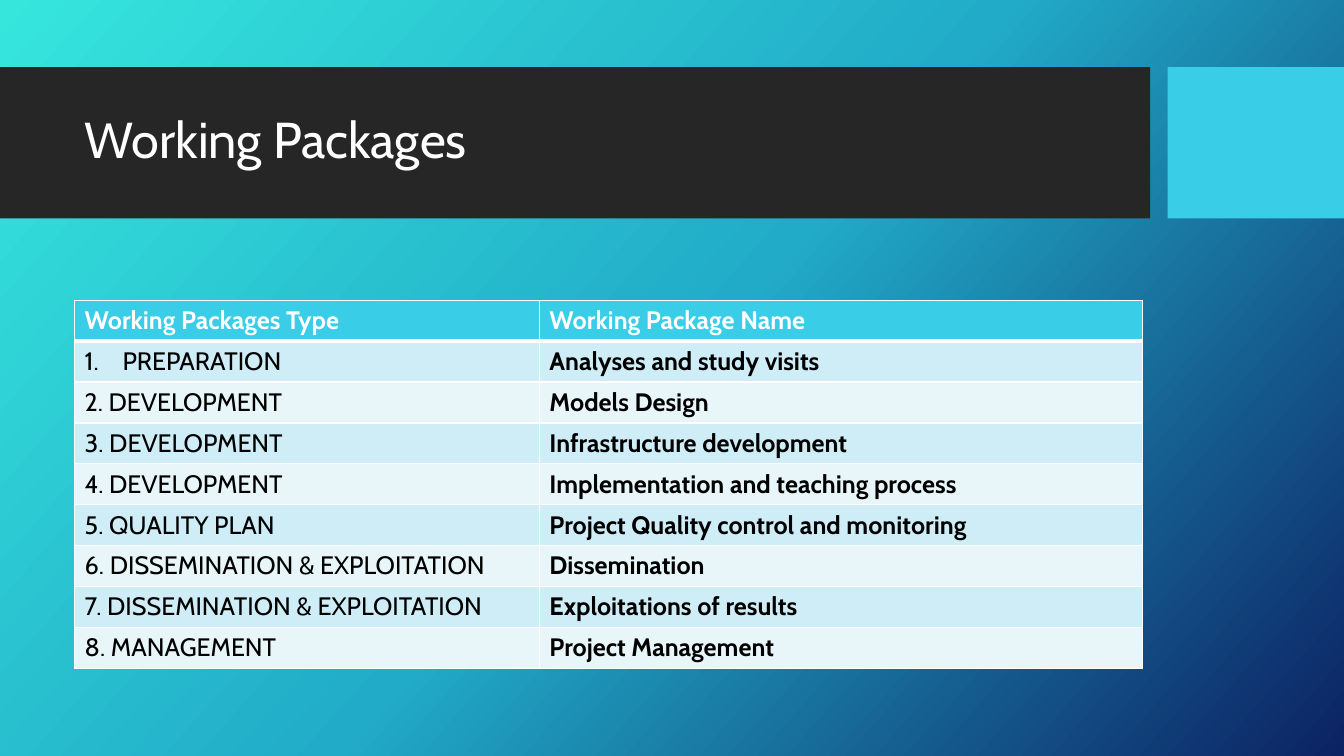
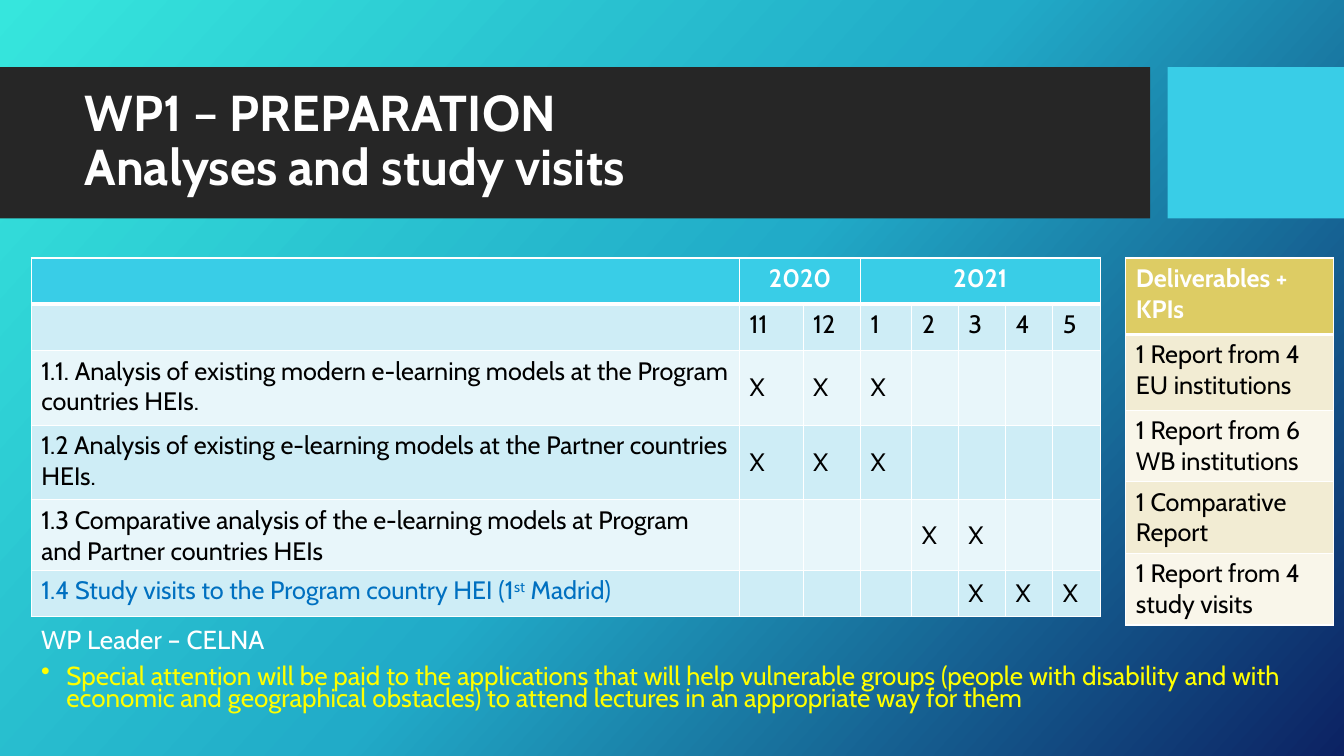
from dataclasses import dataclass, field
from typing import Optional

from lxml import etree
from pptx import Presentation
from pptx.dml.color import RGBColor
from pptx.enum.shapes import MSO_SHAPE
from pptx.enum.text import MSO_ANCHOR, MSO_AUTO_SIZE, PP_ALIGN
from pptx.oxml.ns import qn
from pptx.util import Pt

RECTANGLE = MSO_SHAPE.RECTANGLE
MIDDLE = MSO_ANCHOR.MIDDLE
NO_AUTOFIT = MSO_AUTO_SIZE.NONE
LEFT, CENTER = PP_ALIGN.LEFT, PP_ALIGN.CENTER

FONT = "Cabin"
COLORS = {
    "white": "FFFFFF", "black": "000000", "yellow": "FFFF00", "blue": "0070C0",
    "band": "262626", "accent": "39CDE7", "aqua": "CEEDF6", "pale aqua": "E8F6FA",
    "gold": "DDCC64", "sand": "F2ECD3", "pale sand": "F9F6EA",
    "sky": "36E6DD", "sea": "21ABC8", "navy": "0C2263",
}
BACKGROUND_STOPS = [(0, "sky"), (50, "sea"), (100, "navy")]
BACKGROUND_ANGLE = 42
TITLE_LEFT = 53.3
TABLE_TOP = 184.3


@dataclass(frozen=True)
class Run:
    text: str
    bold: Optional[bool] = None
    raised: bool = False


@dataclass(frozen=True)
class Line:
    """One paragraph; marker is a bullet character or "auto" for numbering."""
    text: str | list[Run]
    color: str = "black"
    bold: bool = False
    size: float = 18
    align: PP_ALIGN = LEFT
    spacing: float = 1
    before: float = 0
    marker: str = ""
    indent: float = 0


@dataclass(frozen=True)
class Palette:
    header: str
    odd: str
    even: str


@dataclass(frozen=True)
class Grid:
    left: float
    top: float
    widths: list[float]
    heights: list[float]
    palette: Palette
    rows: list[list[Line]]
    header_spans: dict[int, int] = field(default_factory=dict)


AQUA = Palette("accent", "aqua", "pale aqua")
GOLD = Palette("gold", "sand", "pale sand")

PACKAGES = [
    ("PREPARATION", "Analyses and study visits"),
    ("DEVELOPMENT", "Models Design"),
    ("DEVELOPMENT", "Infrastructure development"),
    ("DEVELOPMENT", "Implementation and teaching process"),
    ("QUALITY PLAN", "Project Quality control and monitoring"),
    ("DISSEMINATION & EXPLOITATION", "Dissemination"),
    ("DISSEMINATION & EXPLOITATION", "Exploitations of results"),
    ("MANAGEMENT", "Project Management"),
]
MONTHS = [11, 12, 1, 2, 3, 4, 5]
ACTIVITIES = [
    (Line("1.1. Analysis of existing modern e-learning models at the Program countries HEIs."),
     {11, 12, 1}),
    (Line("1.2 Analysis of existing e-learning models at the Partner countries HEIs."),
     {11, 12, 1}),
    (Line("1.3 Comparative analysis of the e-learning models at Program and Partner countries HEIs"),
     {2, 3}),
    (Line([Run("1.4 Study visits to the Program country HEI (1"), Run("st", raised=True),
           Run(" Madrid)")], color="blue"),
     {3, 4, 5}),
]
DELIVERABLES = [
    "1 Report from 4 EU institutions",
    "1 Report from 6 WB institutions",
    "1 Comparative Report",
    "1 Report from 4 study visits",
]
REMARKS = [
    Line("WP Leader – CELNA", "white", size=18.6, spacing=0.7),
    Line("Special attention will be paid to the applications that will help vulnerable groups "
         "(people with disability and with economic and geographical obstacles) to attend "
         "lectures in an appropriate way for them",
         "yellow", size=18.6, spacing=0.7, before=10, marker="•", indent=18),
]


def rgb(name: str) -> RGBColor:
    return RGBColor.from_string(COLORS[name])


def add_marker(paragraph, marker: str, indent: float) -> None:
    properties = paragraph._p.get_or_add_pPr()
    properties.set("marL", str(Pt(indent)))
    properties.set("indent", str(-Pt(indent)))
    if marker == "auto":
        etree.SubElement(properties, qn("a:buAutoNum"), type="arabicPeriod")
    else:
        etree.SubElement(properties, qn("a:buChar"), char=marker)


def write_line(paragraph, line: Line) -> None:
    paragraph.alignment = line.align
    paragraph.line_spacing = line.spacing
    paragraph.space_before = Pt(line.before)
    if line.marker:
        add_marker(paragraph, line.marker, line.indent)
    font = paragraph.font
    font.name, font.size, font.bold = FONT, Pt(line.size), line.bold
    font.color.rgb = rgb(line.color)
    runs = [Run(line.text)] if isinstance(line.text, str) else line.text
    for part in runs:
        if part.text == "\n":
            paragraph.add_line_break()
            continue
        run = paragraph.add_run()
        run.text = part.text
        if part.bold is not None:
            run.font.bold = part.bold
        if part.raised:
            run._r.get_or_add_rPr().set("baseline", "30000")


def add_color_stop(parent, position: int, color: str) -> None:
    stop = etree.SubElement(parent, qn("a:gs"), pos=str(position * 1000))
    etree.SubElement(stop, qn("a:srgbClr"), val=COLORS[color])


def style_layout(layout, slide) -> None:
    """Give the layout its gradient and bands; shapes are made on a slide, then moved."""
    fill = layout.background.fill
    fill.gradient()
    fill.gradient_angle = 360 - BACKGROUND_ANGLE
    stops = next(layout.element.iter(qn("a:gsLst")))
    stops.clear()
    for position, color in BACKGROUND_STOPS:
        add_color_stop(stops, position, color)
    for left, width, color in [(0, 821.5, "band"), (834, 126, "accent")]:
        band = slide.shapes.add_shape(RECTANGLE, Pt(left), Pt(48), Pt(width), Pt(108))
        band.shadow.inherit = False
        band.fill.solid()
        band.fill.fore_color.rgb = rgb(color)
        band.line.fill.background()
        layout.shapes.element.insert(2, band.element)


def write_title(slide, runs: list[Run]) -> None:
    title = slide.shapes.title
    title.left, title.top = Pt(TITLE_LEFT), Pt(59)
    title.width, title.height = Pt(756.7), Pt(85)
    frame = title.text_frame
    frame.word_wrap = True
    frame.auto_size = NO_AUTOFIT
    frame.vertical_anchor = MIDDLE
    write_line(frame.paragraphs[0], Line(runs, "white", size=36, spacing=0.9))


def set_borders(cell, top: float, bottom: float) -> None:
    properties = cell._tc.get_or_add_tcPr()
    for side, width in [("L", 1), ("R", 1), ("T", top), ("B", bottom)]:
        border = etree.SubElement(properties, qn(f"a:ln{side}"), w=str(Pt(width)))
        solid = etree.SubElement(border, qn("a:solidFill"))
        etree.SubElement(solid, qn("a:srgbClr"), val=COLORS["white"])


def draw_table(slide, grid: Grid) -> None:
    table = slide.shapes.add_table(
        len(grid.heights), len(grid.widths), Pt(grid.left), Pt(grid.top),
        Pt(sum(grid.widths)), Pt(sum(grid.heights))).table
    for column, width in zip(table.columns, grid.widths):
        column.width = Pt(width)
    for row, height in zip(table.rows, grid.heights):
        row.height = Pt(height)
    for start, count in grid.header_spans.items():
        table.cell(0, start).merge(table.cell(0, start + count - 1))
    palette = grid.palette
    for r, lines in enumerate(grid.rows):
        color = palette.header if r == 0 else palette.odd if r % 2 else palette.even
        for c, line in enumerate(lines):
            cell = table.cell(r, c)
            set_borders(cell, top=3 if r == 1 else 1, bottom=3 if r == 0 else 1)
            cell.fill.solid()
            cell.fill.fore_color.rgb = rgb(color)
            if line.text:
                write_line(cell.text_frame.paragraphs[0], line)
            if line.text == "X":
                cell.vertical_anchor = MIDDLE


def header(text: str, align: PP_ALIGN = LEFT) -> Line:
    return Line(text, "white", bold=True, align=align)


def package_rows() -> list[list[Line]]:
    rows = [[header("Working Packages Type"), header("Working Package Name")]]
    for number, (kind, name) in enumerate(PACKAGES, 1):
        if number == 1:
            kind_line = Line(kind, marker="auto", indent=27)
        else:
            kind_line = Line(f"{number}. {kind}")
        rows.append([kind_line, Line(name, bold=True)])
    return rows


def schedule_rows() -> list[list[Line]]:
    years = {0: "2020", 2: "2021"}
    rows = [
        [Line("")] + [header(years.get(i, ""), CENTER) for i in range(len(MONTHS))],
        [Line("")] + [Line(str(month)) for month in MONTHS],
    ]
    for activity, active in ACTIVITIES:
        rows.append([activity] + [Line("X" if month in active else "") for month in MONTHS])
    return rows


def draw_remarks(slide) -> None:
    frame = slide.shapes.add_textbox(Pt(22.3), Pt(448), Pt(930), Pt(81)).text_frame
    frame.word_wrap = True
    for i, line in enumerate(REMARKS):
        write_line(frame.add_paragraph() if i else frame.paragraphs[0], line)


def build_packages(slide) -> None:
    write_title(slide, [Run("Working Packages")])
    draw_table(slide, Grid(TITLE_LEFT, 214.5, [332, 431], [29.2] * 9, AQUA, package_rows()))


def build_preparation(slide) -> None:
    write_title(slide, [Run("WP1", bold=True), Run(" – "), Run("PREPARATION", bold=True),
                        Run("\n"), Run("Analyses and study visits", bold=True)])
    deliverables = [header("Deliverables + KPIs")] + [Line(text) for text in DELIVERABLES]
    draw_table(slide, Grid(804.2, TABLE_TOP, [148.3], [54.7, 54, 49, 49.7, 49], GOLD,
                           [[line] for line in deliverables]))
    draw_remarks(slide)
    draw_table(slide, Grid(22.3, TABLE_TOP, [506, 45.4, 41, 36.7, 33.1] + [33.8] * 3,
                           [33.1, 33.1, 53.3, 53.3, 43.9, 33.1], AQUA,
                           schedule_rows(), {1: 2, 3: 5}))


def main() -> None:
    presentation = Presentation()
    presentation.slide_width, presentation.slide_height = Pt(960), Pt(540)
    layout = presentation.slide_layouts.get_by_name("Title Only")
    packages, preparation = (presentation.slides.add_slide(layout) for _ in range(2))
    style_layout(layout, packages)
    build_packages(packages)
    build_preparation(preparation)
    presentation.save("out.pptx")


if __name__ == "__main__":
    main()
